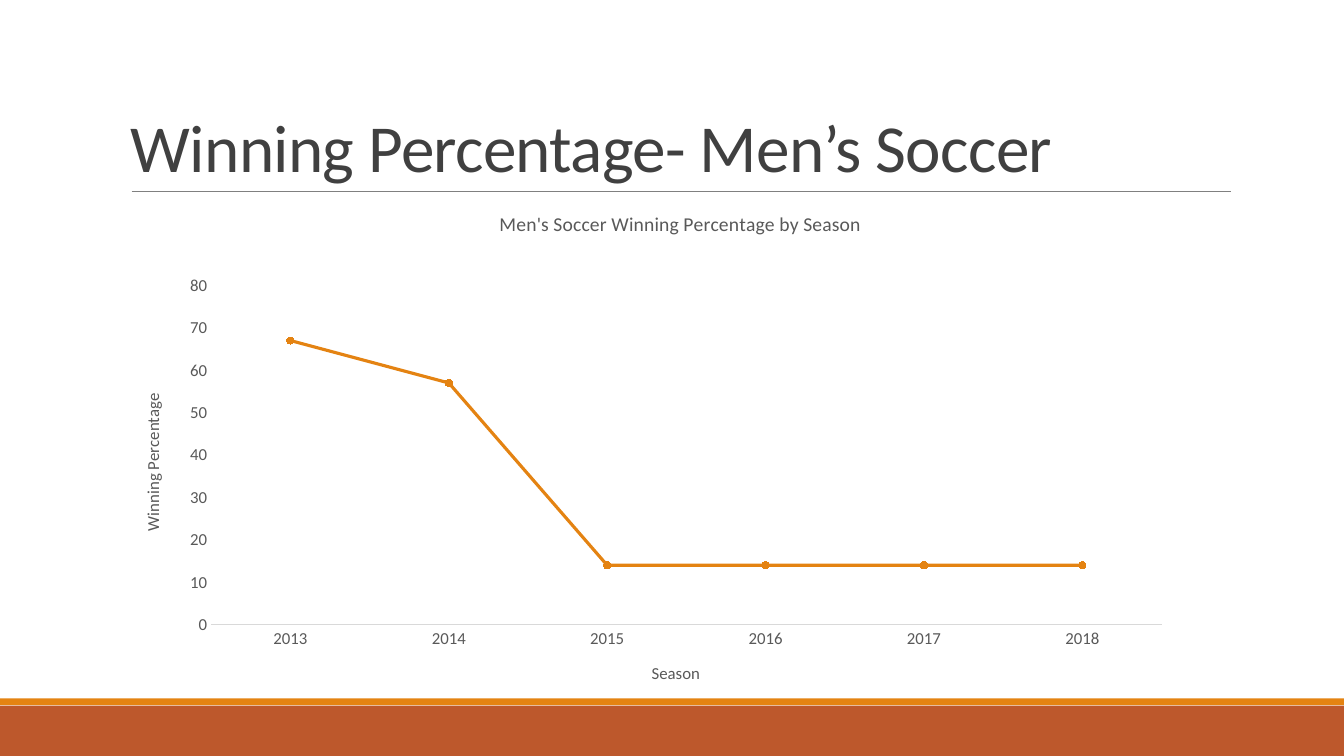
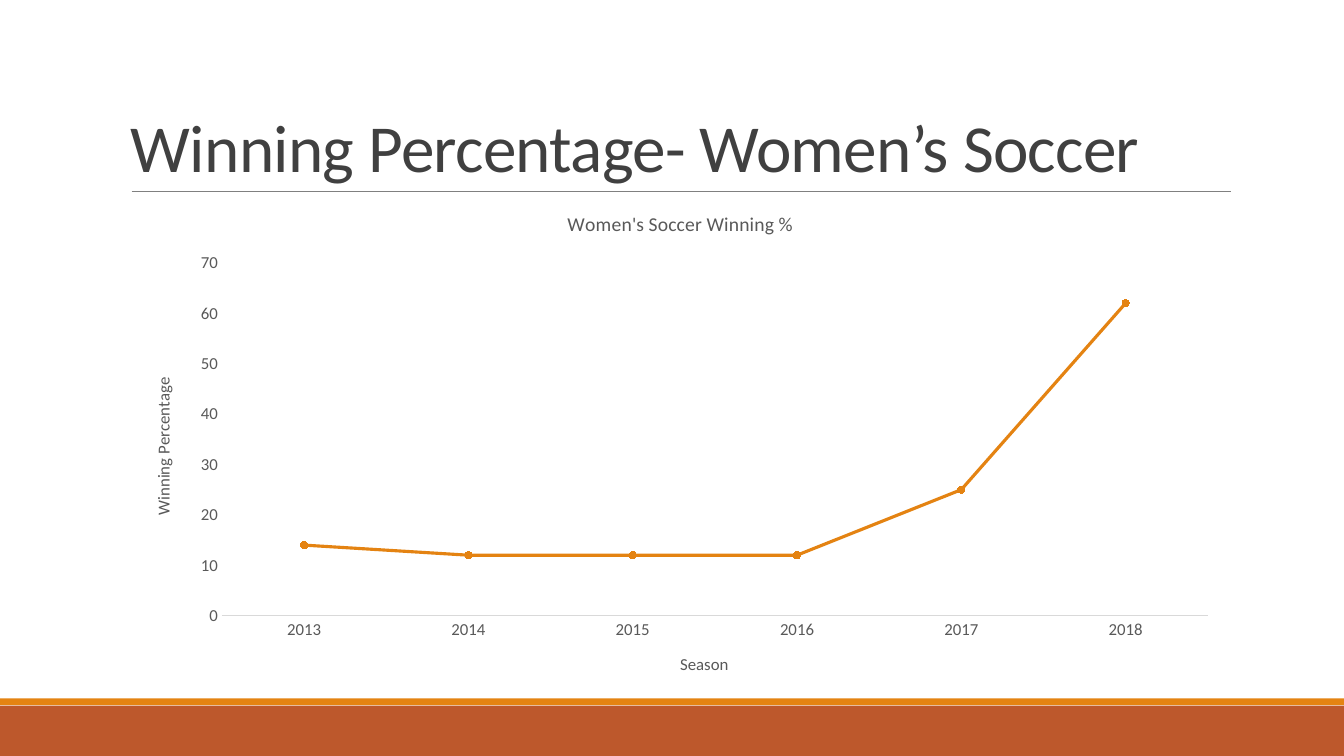
from pptx import Presentation
from pptx.chart.data import CategoryChartData
from pptx.dml.color import RGBColor
from pptx.enum.chart import XL_CHART_TYPE as ChartType, XL_MARKER_STYLE as Marker, XL_TICK_MARK as Tick
from pptx.enum.shapes import MSO_CONNECTOR as Connector, MSO_SHAPE as Shape
from pptx.enum.text import MSO_ANCHOR as Anchor
from pptx.oxml import parse_xml
from pptx.oxml.ns import nsdecls, qn
from pptx.util import Pt

RUST = RGBColor(0xBD, 0x58, 0x2C)
ORANGE = RGBColor(0xE4, 0x83, 0x12)
RULE_GRAY = RGBColor(0x80, 0x80, 0x80)
TITLE_GRAY = RGBColor(0x40, 0x40, 0x40)
CHART_GRAY = RGBColor(0x59, 0x59, 0x59)
AXIS_GRAY = RGBColor(0xD9, 0xD9, 0xD9)
FONT = "Calibri"
WIDTH, HEIGHT = 960, 540

SEASONS = ["2013", "2014", "2015", "2016", "2017", "2018"]
BANDS = [(504, 36, RUST), (498.8, 4.8, ORANGE)]
SLIDES = [
    {
        "title": "Winning Percentage- Men’s Soccer",
        "chart_title": "Men's Soccer Winning Percentage by Season",
        "values": [67, 57, 14, 14, 14, 14],
        "plot": {"x": 0.073, "y": 0.186, "w": 0.865, "h": 0.672},
    },
    {
        "title": "Winning Percentage- Women’s Soccer",
        "chart_title": "Women's Soccer Winning %",
        "values": [14, 12, 12, 12, 25, 62],
        "plot": None,
    },
]


def style_font(font, size, color):
    font.name, font.size, font.bold = FONT, Pt(size), False
    font.color.rgb = color


def add_frame(s):
    for top, height, color in BANDS:
        sp = s.shapes.add_shape(Shape.RECTANGLE, 0, Pt(top), Pt(WIDTH), Pt(height))
        sp.shadow.inherit = False
        sp.fill.solid()
        sp.fill.fore_color.rgb = color
        sp.line.fill.background()
    rule = s.shapes.add_connector(Connector.STRAIGHT, Pt(94), Pt(136.8), Pt(879), Pt(136.8))
    rule.line.color.rgb = RULE_GRAY
    rule.line.width = Pt(0.5)
    rule._element.spPr.append(parse_xml(f"<a:effectLst {nsdecls('a')}/>"))


def add_title(s, text):
    tf = s.shapes.add_textbox(Pt(86.4), Pt(22.5), Pt(792), Pt(114.3)).text_frame
    tf.word_wrap = True
    tf.vertical_anchor = Anchor.BOTTOM
    p = tf.paragraphs[0]
    p.line_spacing = 0.85
    r = p.add_run()
    r.text = text
    style_font(r.font, 48, TITLE_GRAY)
    r._r.get_or_add_rPr().set("spc", "-50")


def add_chart_text(tf, text, size):
    r = tf.paragraphs[0].add_run()
    r.text = text
    style_font(r.font, size, CHART_GRAY)


def set_plot_layout(chart, plot):
    area = chart._chartSpace.chart.plotArea
    for old in area.findall(qn("c:layout")):
        area.remove(old)
    modes = '<c:layoutTarget val="inner"/><c:xMode val="edge"/><c:yMode val="edge"/>'
    sizes = "".join(f'<c:{key} val="{value}"/>' for key, value in plot.items())
    area.insert(0, parse_xml(
        f"<c:layout {nsdecls('c')}><c:manualLayout>{modes}{sizes}</c:manualLayout></c:layout>"))


def add_line_chart(s, title, values, plot):
    data = CategoryChartData()
    data.categories = SEASONS
    data.add_series("Series 1", values)
    chart = s.shapes.add_chart(ChartType.LINE_MARKERS_STACKED, Pt(93.6), Pt(136.8),
                               Pt(784.8), Pt(360.7), data).chart
    style_font(chart.font, 12, CHART_GRAY)
    chart.has_legend = False
    chart.has_title = True
    add_chart_text(chart.chart_title.text_frame, title, 14)
    chart.chart_title.include_in_layout = False

    for axis, name in ((chart.category_axis, "Season"), (chart.value_axis, "Winning Percentage")):
        add_chart_text(axis.axis_title.text_frame, name, 12)
        axis.has_major_gridlines = False
        axis.major_tick_mark = axis.minor_tick_mark = Tick.NONE
        style_font(axis.tick_labels.font, 12, CHART_GRAY)
    chart.category_axis.format.line.color.rgb = AXIS_GRAY
    chart.category_axis.format.line.width = Pt(0.75)
    chart.value_axis.format.line.fill.background()

    chart.plots[0].vary_by_categories = False
    series = chart.plots[0].series[0]
    series.smooth = False
    series.format.line.color.rgb = ORANGE
    series.format.line.width = Pt(2.25)
    series.marker.style = Marker.CIRCLE
    series.marker.size = 5
    series.marker.format.fill.solid()
    series.marker.format.fill.fore_color.rgb = ORANGE
    series.marker.format.line.color.rgb = ORANGE
    if plot:
        set_plot_layout(chart, plot)


def main():
    prs = Presentation()
    prs.slide_width, prs.slide_height = Pt(WIDTH), Pt(HEIGHT)
    for content in SLIDES:
        s = prs.slides.add_slide(prs.slide_layouts[6])
        add_frame(s)
        add_title(s, content["title"])
        add_line_chart(s, content["chart_title"], content["values"], content["plot"])
    prs.save("out.pptx")


if __name__ == "__main__":
    main()
